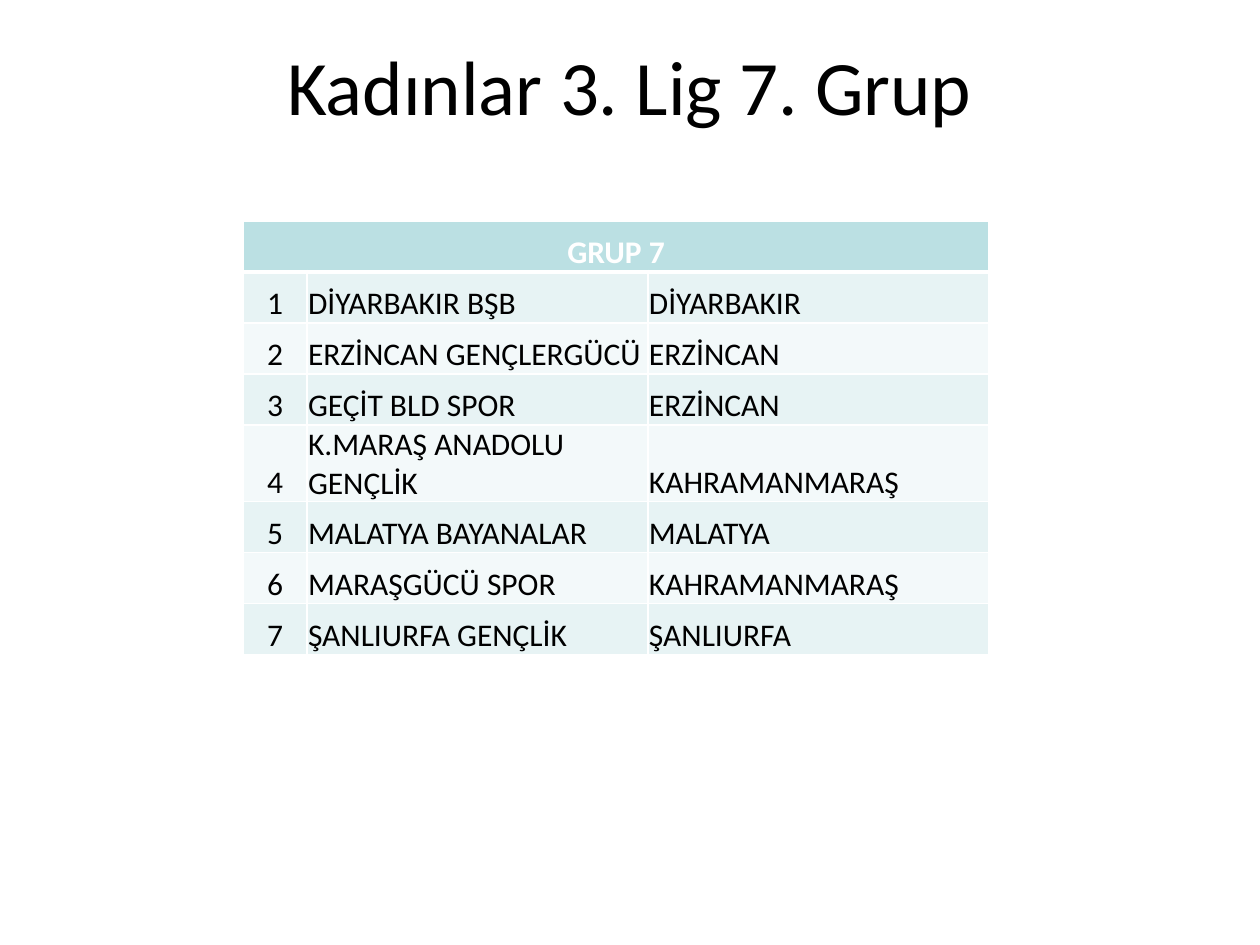
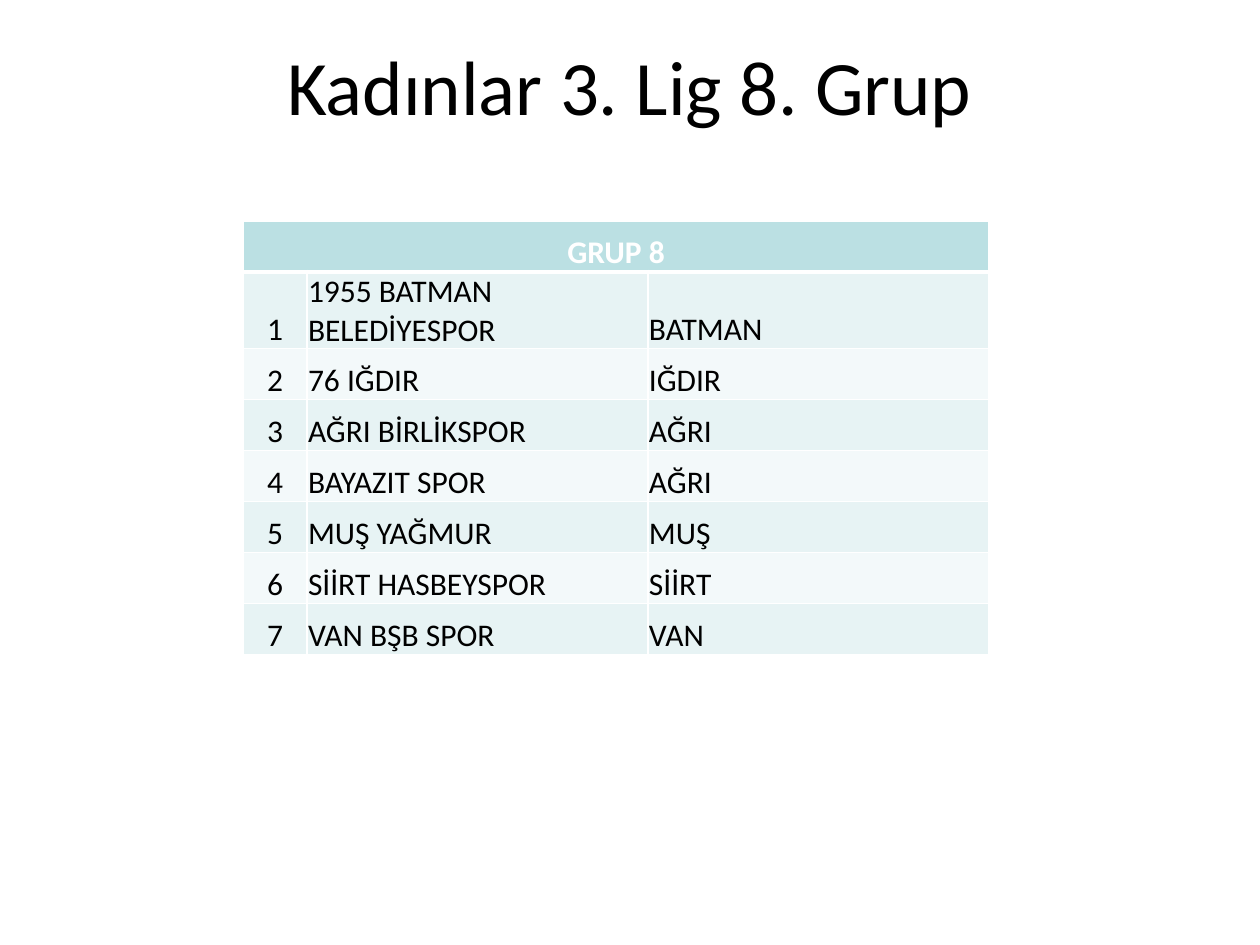
import pptx
import pptx.dml.color
import pptx.enum.text
import pptx.oxml
import pptx.oxml.ns
import pptx.util

PX = 914400 / 126
FONT = "Calibri"
COLORS = {
    "title": "000000",
    "body": "000000",
    "header_text": "FFFFFF",
    "header": "BBE0E3",
    "odd_row": "E7F3F4",
    "even_row": "F3F9FA",
    "border": "FFFFFF",
}
ALIGN = pptx.enum.text.PP_ALIGN
ANCHOR = pptx.enum.text.MSO_ANCHOR

COLUMN_WIDTHS = [64, 341, 341]
ROW_HEIGHT = 51
GROUPS = {
    7: [
        ("DİYARBAKIR BŞB", "DİYARBAKIR"),
        ("ERZİNCAN GENÇLERGÜCÜ", "ERZİNCAN"),
        ("GEÇİT BLD SPOR", "ERZİNCAN"),
        ("K.MARAŞ ANADOLU GENÇLİK", "KAHRAMANMARAŞ"),
        ("MALATYA BAYANALAR", "MALATYA"),
        ("MARAŞGÜCÜ SPOR", "KAHRAMANMARAŞ"),
        ("ŞANLIURFA GENÇLİK", "ŞANLIURFA"),
    ],
    8: [
        ("1955 BATMAN BELEDİYESPOR", "BATMAN"),
        ("76 IĞDIR", "IĞDIR"),
        ("AĞRI BİRLİKSPOR", "AĞRI"),
        ("BAYAZIT SPOR", "AĞRI"),
        ("MUŞ YAĞMUR", "MUŞ"),
        ("SİİRT HASBEYSPOR", "SİİRT"),
        ("VAN BŞB SPOR", "VAN"),
    ],
}


def px(*lengths):
    """Turn pixel lengths into a list of EMU."""
    return [pptx.util.Emu(round(length * PX)) for length in lengths]


def write_text(frame, text, size=18, color="body", bold=False, align=ALIGN.LEFT):
    paragraph = frame.paragraphs[0]
    paragraph.alignment = align
    run = paragraph.add_run()
    run.text = text
    run.font.name = FONT
    run.font.size = pptx.util.Pt(size)
    run.font.bold = bold
    run.font.color.rgb = pptx.dml.color.RGBColor.from_string(COLORS[color])


deck = pptx.Presentation()
deck.slide_width, deck.slide_height = px(1260, 945)

for number, teams in GROUPS.items():
    slide = deck.slides.add_slide(deck.slide_layouts[6])

    title = slide.shapes.add_textbox(*px(63, 6, 1134, 158)).text_frame
    title.word_wrap = True
    title.vertical_anchor = ANCHOR.MIDDLE
    write_text(title, f"Kadınlar 3. Lig {number}. Grup", size=44, color="title", align=ALIGN.CENTER)

    rows = [(f"GRUP {number}", "", "")]
    rows += [(str(place), team, city) for place, (team, city) in enumerate(teams, 1)]
    area = px(243, 221, sum(COLUMN_WIDTHS), ROW_HEIGHT * len(rows))
    standings = slide.shapes.add_table(len(rows), len(COLUMN_WIDTHS), *area).table
    for column, width in zip(standings.columns, px(*COLUMN_WIDTHS)):
        column.width = width
    for row in standings.rows:
        row.height = px(ROW_HEIGHT)[0]
    standings.cell(0, 0).merge(standings.cell(0, 2))

    for r, texts in enumerate(rows):
        row_fill = "header" if r == 0 else ("odd_row" if r % 2 else "even_row")
        border_widths = {"L": 1, "R": 1, "T": 3 if r == 1 else 1, "B": 3 if r == 0 else 1}
        for c, text in enumerate(texts):
            cell = standings.cell(r, c)
            cell.margin_left, cell.margin_right, cell.margin_top, cell.margin_bottom = px(1, 1, 1, 0)
            cell.vertical_anchor = ANCHOR.BOTTOM
            cell.fill.solid()
            cell.fill.fore_color.rgb = pptx.dml.color.RGBColor.from_string(COLORS[row_fill])
            for position, (side, width) in enumerate(border_widths.items()):
                border = pptx.oxml.parse_xml(
                    f'<a:ln{side} {pptx.oxml.ns.nsdecls("a")} w="{pptx.util.Pt(width)}">'
                    f'<a:solidFill><a:srgbClr val="{COLORS["border"]}"/></a:solidFill></a:ln{side}>'
                )
                cell._tc.get_or_add_tcPr().insert(position, border)
            if text:
                write_text(
                    cell.text_frame,
                    text,
                    color="header_text" if r == 0 else "body",
                    bold=r == 0,
                    align=ALIGN.CENTER if c == 0 else ALIGN.LEFT,
                )

deck.save("out.pptx")
